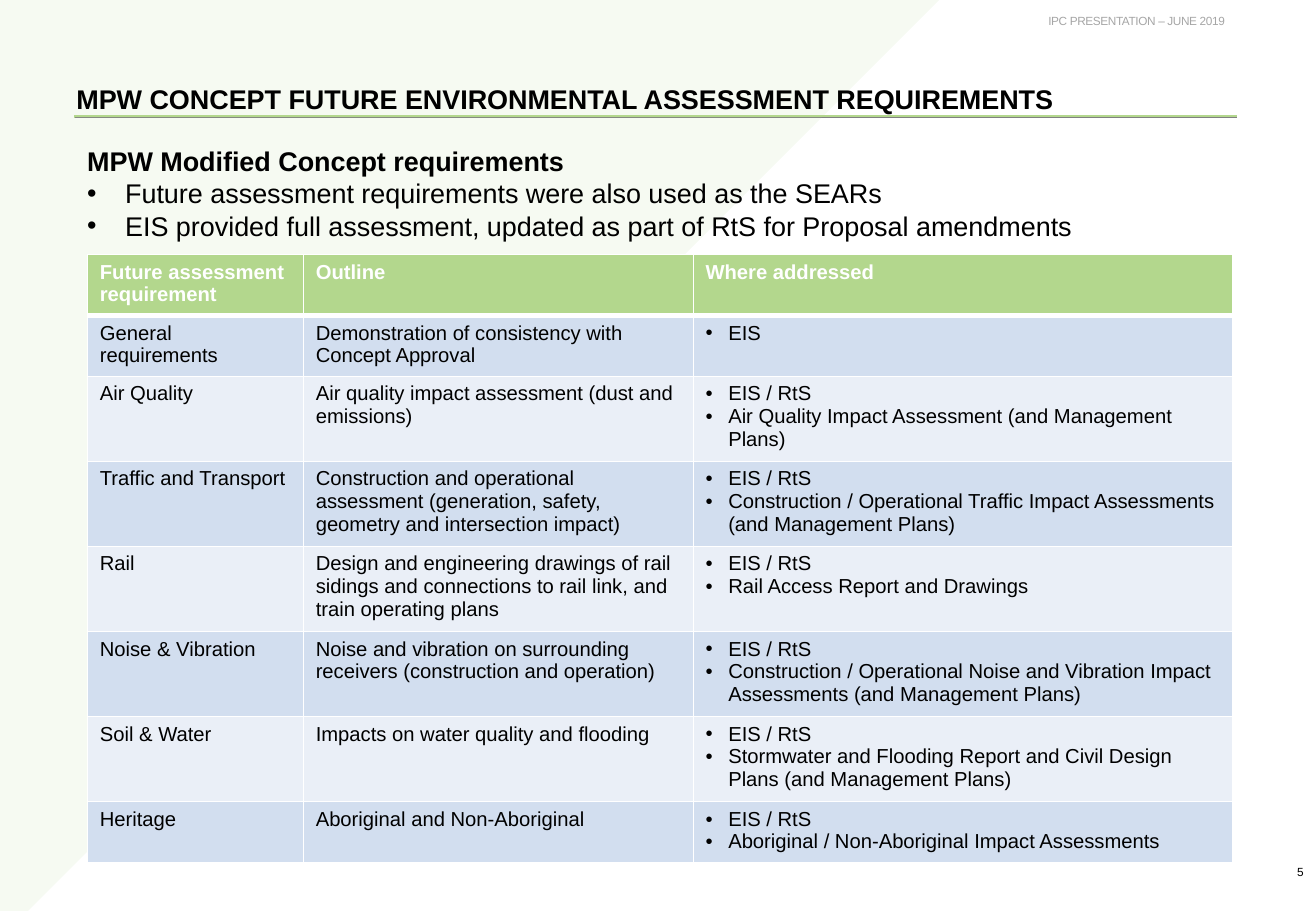
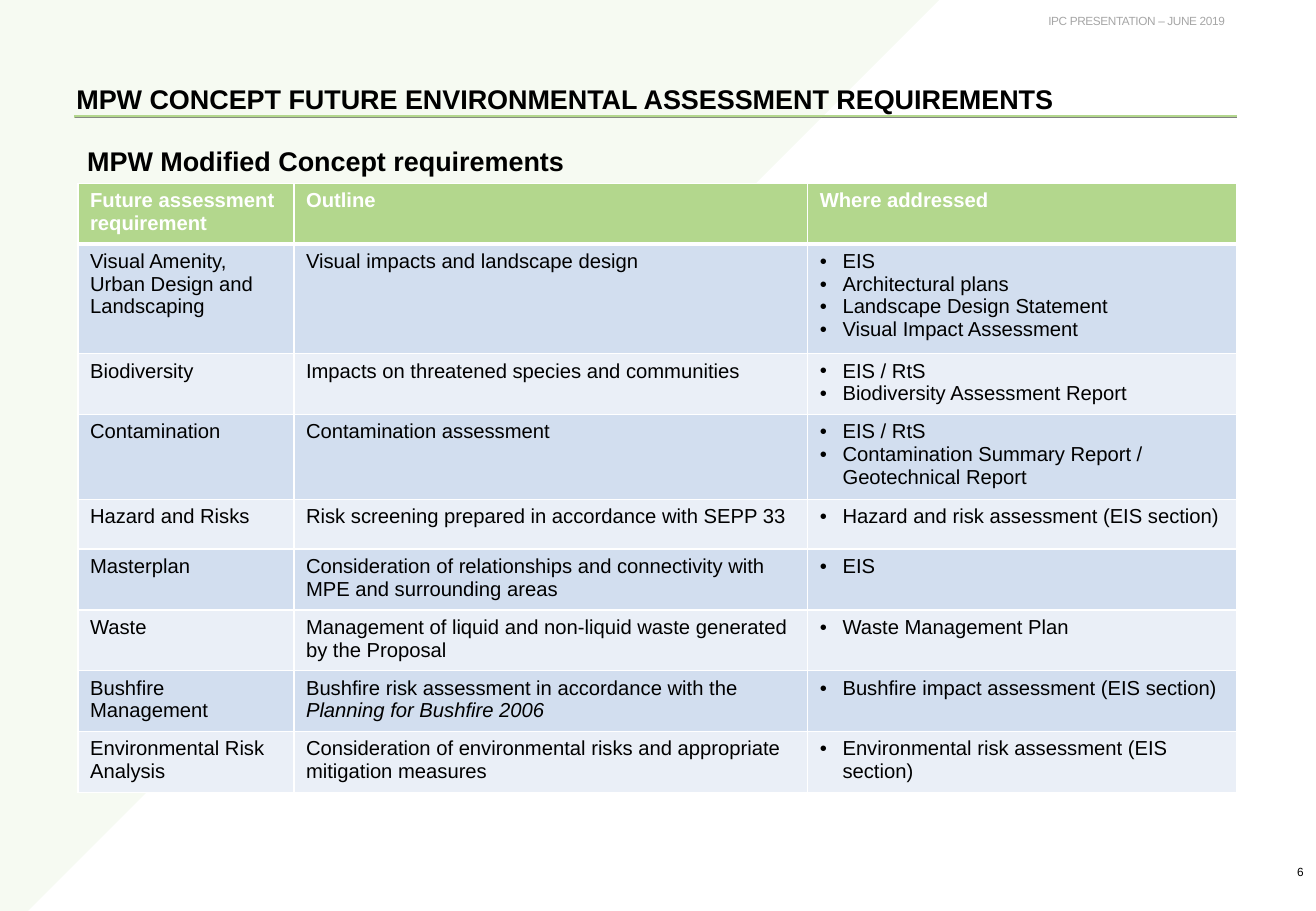
from lxml import etree
from pptx import Presentation
from pptx.dml.color import RGBColor
from pptx.enum.shapes import MSO_CONNECTOR, MSO_SHAPE
from pptx.enum.text import MSO_ANCHOR, PP_ALIGN
from pptx.oxml.ns import qn
from pptx.util import Pt

STRAIGHT = MSO_CONNECTOR.STRAIGHT
RIGHT_TRIANGLE = MSO_SHAPE.RIGHT_TRIANGLE
MIDDLE = MSO_ANCHOR.MIDDLE
LEFT, RIGHT = PP_ALIGN.LEFT, PP_ALIGN.RIGHT

COLOURS = {
    "green": "B3D78D",
    "rule_grey": "808080",
    "header_grey": "A6A6A6",
    "black": "000000",
    "white": "FFFFFF",
    "band_dark": "D2DEEF",
    "band_light": "EAEFF7",
}

SMALL = {"size": Pt(7), "bold": False}
HEADING = {"size": Pt(16), "bold": True}
BODY = {"size": Pt(16), "bold": False}
CELL = {"size": Pt(12), "bold": False}
CELL_HEADER = {"size": Pt(12), "bold": True}

TITLE = "MPW CONCEPT FUTURE ENVIRONMENTAL ASSESSMENT REQUIREMENTS"
SUBTITLE = "MPW Modified Concept requirements"
COLUMN_HEADS = ("Future assessment requirement", "Outline", "Where addressed")

ONE_LINE, TWO_LINES, THREE_LINES, FOUR_LINES = 29.5, 36, 50.4, 64.6

# Each row: height, requirement, outline, list of places where addressed
CORE_ROWS = [
    (TWO_LINES, "General requirements",
     "Demonstration of consistency with Concept Approval", ["EIS"]),
    (THREE_LINES, "Air Quality",
     "Air quality impact assessment (dust and emissions)",
     ["EIS / RtS", "Air Quality Impact Assessment (and Management Plans)"]),
    (THREE_LINES, "Traffic and Transport",
     "Construction and operational assessment (generation, safety, geometry "
     "and intersection impact)",
     ["EIS / RtS",
      "Construction / Operational Traffic Impact Assessments (and Management Plans)"]),
    (THREE_LINES, "Rail",
     "Design and engineering drawings of rail sidings and connections to rail "
     "link, and train operating plans",
     ["EIS / RtS", "Rail Access Report and Drawings"]),
    (THREE_LINES, "Noise & Vibration",
     "Noise and vibration on surrounding receivers (construction and operation)",
     ["EIS / RtS",
      "Construction / Operational Noise and Vibration Impact Assessments "
      "(and Management Plans)"]),
    (THREE_LINES, "Soil & Water", "Impacts on water quality and flooding",
     ["EIS / RtS",
      "Stormwater and Flooding Report and Civil Design Plans (and Management Plans)"]),
    (TWO_LINES, "Heritage", "Aboriginal and Non-Aboriginal",
     ["EIS / RtS", "Aboriginal / Non-Aboriginal Impact Assessments"]),
]
FURTHER_ROWS = [
    (FOUR_LINES, "Visual Amenity, Urban Design and Landscaping",
     "Visual impacts and landscape design",
     ["EIS", "Architectural plans", "Landscape Design Statement",
      "Visual Impact Assessment"]),
    (TWO_LINES, "Biodiversity", "Impacts on threatened species and communities",
     ["EIS / RtS", "Biodiversity Assessment Report"]),
    (THREE_LINES, "Contamination", "Contamination assessment",
     ["EIS / RtS", "Contamination Summary Report / Geotechnical Report"]),
    (ONE_LINE, "Hazard and Risks",
     "Risk screening prepared in accordance with SEPP 33",
     ["Hazard and risk assessment (EIS section)"]),
    (TWO_LINES, "Masterplan",
     "Consideration of relationships and connectivity with MPE and surrounding areas",
     ["EIS"]),
    (TWO_LINES, "Waste",
     "Management of liquid and non-liquid waste generated by the Proposal",
     ["Waste Management Plan"]),
    (TWO_LINES, "Bushfire Management",
     ("Bushfire risk assessment in accordance with the ",
      "Planning for Bushfire 2006"),
     ["Bushfire impact assessment (EIS section)"]),
    (TWO_LINES, "Environmental Risk Analysis",
     "Consideration of environmental risks and appropriate mitigation measures",
     ["Environmental risk assessment (EIS section)"]),
]


def colour(name):
    return RGBColor.from_string(COLOURS[name])


def add_run(paragraph, text, formats, colour_name="black"):
    run = paragraph.add_run()
    run.text = text
    run.font.name = "Arial"
    run.font.color.rgb = colour(colour_name)
    for attribute, value in formats.items():
        setattr(run.font, attribute, value)
    return run


def add_bullet(paragraph, indent):
    properties = paragraph._p.get_or_add_pPr()
    properties.set("marL", str(Pt(indent)))
    properties.set("indent", str(-Pt(indent)))
    etree.SubElement(properties, qn("a:buFont")).set("typeface", "Arial")
    etree.SubElement(properties, qn("a:buChar")).set("char", "•")


def add_bullets(paragraphs, texts, indent, formats):
    for paragraph, text in zip(paragraphs, texts):
        add_bullet(paragraph, indent)
        add_run(paragraph, text, formats)


def add_text(slide, box, text, formats, colour_name="black", alignment=LEFT):
    shape = slide.shapes.add_textbox(*map(Pt, box))
    frame = shape.text_frame
    frame.word_wrap = True
    paragraph = frame.paragraphs[0]
    paragraph.alignment = alignment
    add_run(paragraph, text, formats, colour_name)
    return frame


def add_rule(slide, left, right, top, colour_name, width):
    rule = slide.shapes.add_connector(STRAIGHT, Pt(left), Pt(top), Pt(right), Pt(top))
    rule.line.color.rgb = colour(colour_name)
    rule.line.width = Pt(width)
    etree.SubElement(rule._element.spPr, qn("a:effectLst"))


def add_corner_triangle(slide):
    side = 583.2
    triangle = slide.shapes.add_shape(RIGHT_TRIANGLE, 0, Pt(-26.6), Pt(side), Pt(side))
    triangle.rotation = 90
    triangle.shadow.inherit = False
    triangle.line.fill.background()
    triangle.fill.solid()
    triangle.fill.fore_color.rgb = colour("green")
    tint = triangle._element.spPr.find(".//" + qn("a:srgbClr"))
    etree.SubElement(tint, qn("a:alpha")).set("val", "11000")


def add_frame(slide, number):
    """Add what every slide shares: rules, triangle, header, number and title."""
    add_rule(slide, 44, 733, 69.1, "green", 1.75)
    add_rule(slide, 44.6, 733, 69.8, "rule_grey", 0.5)
    add_corner_triangle(slide)
    header = add_text(slide, (520.6, 4.3, 212.4, 15.8), "IPC PRESENTATION – JUNE 2019",
                      SMALL, "header_grey", RIGHT)
    header.paragraphs[0].runs[0].font._element.set("spc", "-20")
    page = add_text(slide, (724.3, 512.6, 55.5, 8.6), str(number), SMALL,
                    alignment=RIGHT)
    page.vertical_anchor = MIDDLE
    page.margin_top = page.margin_bottom = 0
    add_text(slide, (38.2, 45.4, 781, 36.7), TITLE, HEADING)


def add_subtitle(slide, height, bullets=()):
    frame = add_text(slide, (44.6, 82.1, 680.4, height), SUBTITLE, HEADING)
    add_bullets([frame.add_paragraph() for _ in bullets], bullets, 22.5, BODY)


def style_cell(cell, fill_name, top_width, bottom_width):
    properties = cell._tc.get_or_add_tcPr()
    widths = {"lnL": 1, "lnR": 1, "lnT": top_width, "lnB": bottom_width}
    for side, width in widths.items():
        border = etree.SubElement(properties, qn("a:" + side), w=str(Pt(width)))
        fill = etree.SubElement(border, qn("a:solidFill"))
        etree.SubElement(fill, qn("a:srgbClr"), val=COLOURS["white"])
    cell.fill.solid()
    cell.fill.fore_color.rgb = colour(fill_name)


def fill_cell(cell, content):
    """Write a string, a (plain, italic) pair or a list of bullets."""
    frame = cell.text_frame
    if isinstance(content, list):
        for _ in content[1:]:
            frame.add_paragraph()
        add_bullets(frame.paragraphs, content, 13.5, CELL)
        return
    pieces = content if isinstance(content, tuple) else (content,)
    for index, piece in enumerate(pieces):
        add_run(frame.paragraphs[0], piece, {**CELL, "italic": index == 1})


def add_requirements_table(slide, left, top, column_widths, rows):
    heights = [TWO_LINES] + [row[0] for row in rows]
    table = slide.shapes.add_table(
        len(heights), len(column_widths), Pt(left), Pt(top),
        Pt(sum(column_widths)), Pt(sum(heights))).table
    for column, width in zip(table.columns, column_widths):
        column.width = Pt(width)
    for row, height in zip(table.rows, heights):
        row.height = Pt(height)
    for cell, text in zip(table.rows[0].cells, COLUMN_HEADS):
        style_cell(cell, "green", 1, 3)
        add_run(cell.text_frame.paragraphs[0], text, CELL_HEADER, "white")
    for index, (_, *contents) in enumerate(rows, start=1):
        band = "band_dark" if index % 2 else "band_light"
        for cell, content in zip(table.rows[index].cells, contents):
            style_cell(cell, band, 3 if index == 1 else 1, 1)
            fill_cell(cell, content)


def main():
    presentation = Presentation()
    presentation.slide_width, presentation.slide_height = Pt(780), Pt(540)
    blank = presentation.slide_layouts[6]

    core = presentation.slides.add_slide(blank)
    add_frame(core, 5)
    add_subtitle(core, 65.5, [
        "Future assessment requirements were also used as the SEARs",
        "EIS provided full assessment, updated as part of RtS for Proposal amendments",
    ])
    add_requirements_table(core, 52, 151, (128, 231, 319.5), CORE_ROWS)

    further = presentation.slides.add_slide(blank)
    add_frame(further, 6)
    add_subtitle(further, 26.6)
    add_requirements_table(further, 46.2, 108.7, (128, 304.5, 254.3), FURTHER_ROWS)

    presentation.save("out.pptx")


if __name__ == "__main__":
    main()
